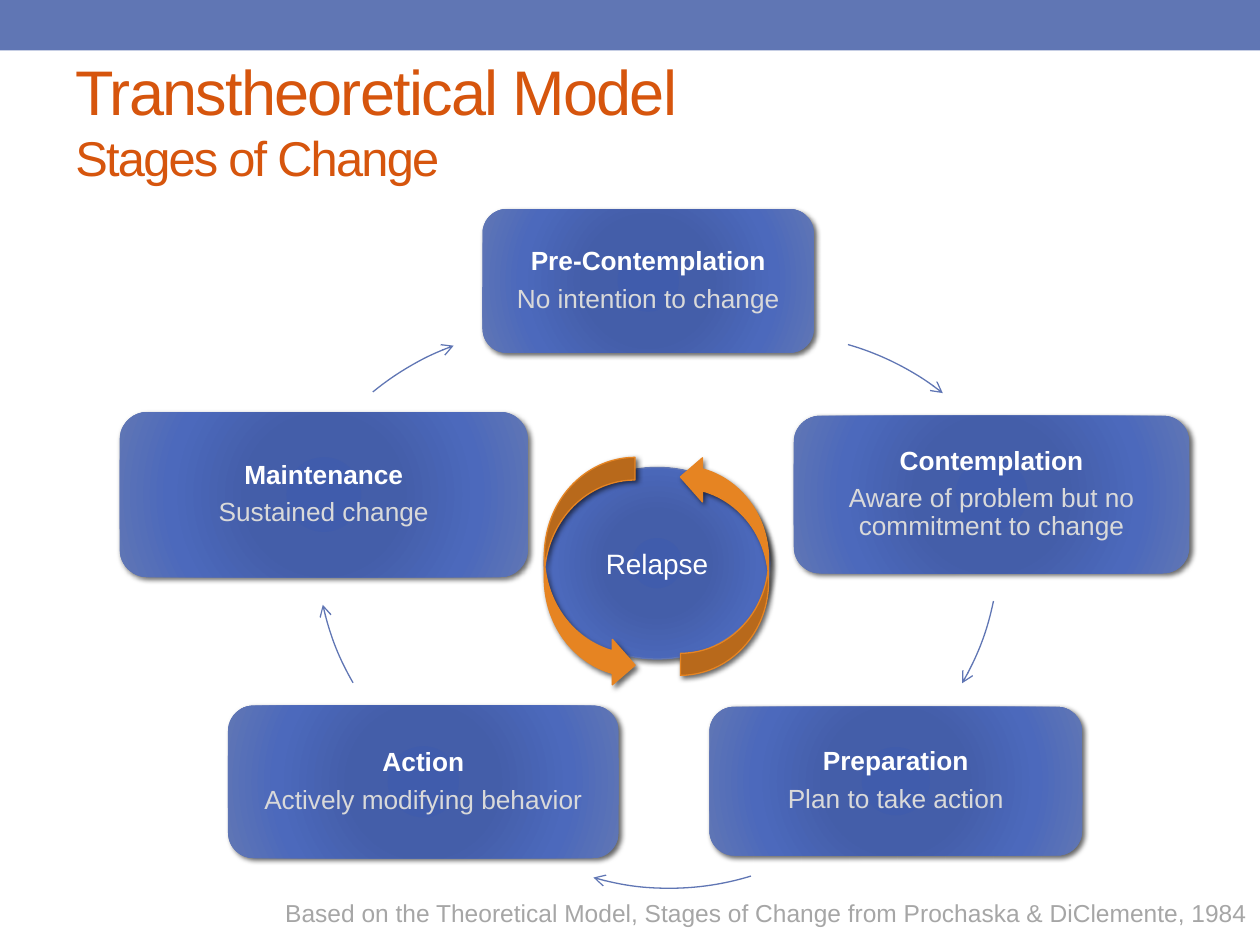
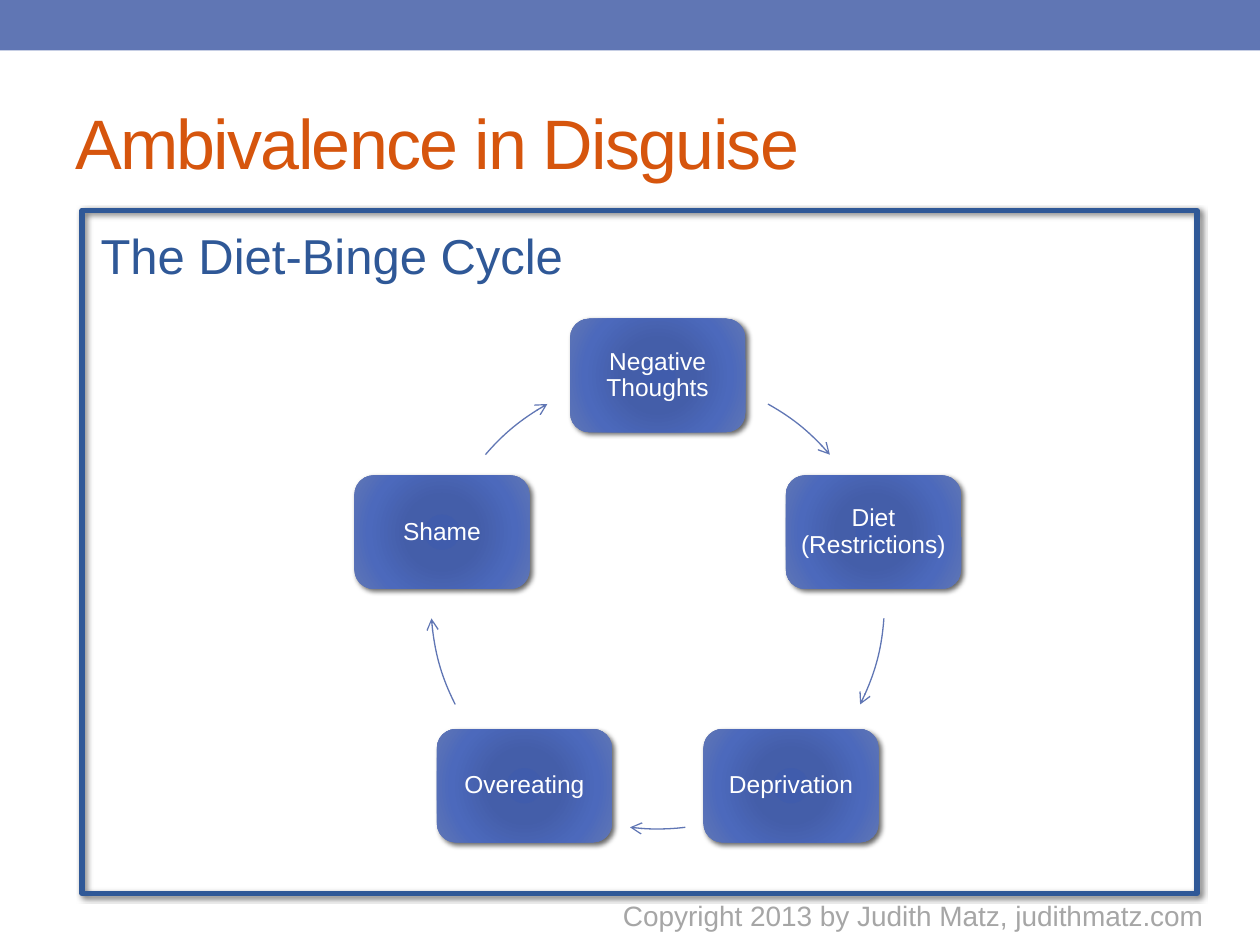
from math import cos, radians, sin

from pptx import Presentation
from pptx.dml.color import RGBColor
from pptx.enum.shapes import MSO_SHAPE
from pptx.enum.text import MSO_ANCHOR, PP_ALIGN
from pptx.oxml import parse_xml
from pptx.oxml.ns import nsdecls, qn
from pptx.util import Inches, Pt

FONT = "Arial"
BLUE = RGBColor(0x60, 0x76, 0xB4)
NAVY = RGBColor(0x2F, 0x58, 0x97)
RUST = RGBColor(0xD6, 0x55, 0x0D)
AMBER = RGBColor(0xE6, 0x84, 0x22)
GRAY = RGBColor(0xA6, 0xA6, 0xA6)
PALE = RGBColor(0xD9, 0xD9, 0xD9)
WHITE = RGBColor(0xFF, 0xFF, 0xFF)
GLOW = [(0, "405CAC"), (34, "445EA9"), (70, "4C69BC"), (100, "6076B4")]

STAGES = [
    ((3.83, 1.66, 2.63, 1.14), "Pre-Contemplation", "No intention to change"),
    ((6.3, 3.3, 3.14, 1.25), "Contemplation",
     "Aware of problem but no commitment to change"),
    ((5.63, 5.61, 2.96, 1.18), "Preparation", "Plan to take action"),
    ((1.81, 5.6, 3.1, 1.21), "Action", "Actively modifying behavior"),
    ((0.95, 3.27, 3.24, 1.31), "Maintenance", "Sustained change"),
]
STAGE_ARCS = [
    (3.93, 2.65, -74, -51.8),
    (3.54, 2.13, 11.7, 30),
    (3.12, 2.66, 72.9, 106),
    (2.51, 2.13, 150.1, 167.5),
    (2.16, 2.61, 230.5, 249.9),
]
CYCLE = ["Negative Thoughts", "Diet (Restrictions)", "Deprivation",
         "Overeating", "Shame"]
CYCLE_ARCS = [(-60.9, -40.6), (4.1, 26.8), (83, 97), (153.2, 175.9),
              (220.6, 240.9)]


def inches(box):
    return [Inches(n) for n in box]


def add_run(para, text, size, color, bold=False):
    run = para.add_run()
    run.text = text
    font = run.font
    font.name, font.size, font.bold = FONT, Pt(size), bold
    font.color.rgb = color
    return run


def add_label(slide, box, text, size, color, align=PP_ALIGN.LEFT):
    frame = slide.shapes.add_textbox(*inches(box)).text_frame
    frame.word_wrap = True
    para = frame.paragraphs[0]
    para.alignment = align
    add_run(para, text, size, color)


def add_title(slide, top, lines):
    box = inches((0.5, top, 9, 1.08))
    frame = slide.shapes.add_textbox(*box).text_frame
    frame.word_wrap = True
    frame.vertical_anchor = MSO_ANCHOR.MIDDLE
    para = frame.paragraphs[0]
    for i, (text, size) in enumerate(lines):
        if i:
            para.add_line_break()
        run = add_run(para, text, size, RUST)
        run.font._element.set("spc", "-100")


def add_form(slide, kind, box, fill=None, line=None, width=0.75):
    form = slide.shapes.add_shape(kind, *inches(box))
    form.shadow.inherit = False
    if fill is None:
        form.fill.background()
    else:
        form.fill.solid()
        form.fill.fore_color.rgb = fill
    if line is None:
        form.line.fill.background()
    else:
        form.line.color.rgb = line
        form.line.width = Pt(width)
    return form


def add_shade(form):
    form._element.spPr.find(qn("a:effectLst")).append(parse_xml(
        f'<a:outerShdw {nsdecls("a")} blurRad="{Pt(3)}" dist="{Pt(2)}" '
        'dir="2700000" algn="br" rotWithShape="0"><a:srgbClr val="000000">'
        '<a:alpha val="60000"/></a:srgbClr></a:outerShdw>'))


def add_glow(form):
    stops = "".join(f'<a:gs pos="{pos * 1000}"><a:srgbClr val="{tone}"/></a:gs>'
                    for pos, tone in GLOW)
    props = form._element.spPr
    props.replace(props.find(qn("a:noFill")), parse_xml(
        f'<a:gradFill {nsdecls("a")} rotWithShape="1"><a:gsLst>{stops}</a:gsLst>'
        '<a:path path="circle"><a:fillToRect l="100000" t="100000" '
        'r="100000" b="100000"/></a:path></a:gradFill>'))
    add_shade(form)


def add_card(slide, box, lines, size):
    card = add_form(slide, MSO_SHAPE.ROUNDED_RECTANGLE, box)
    add_glow(card)
    frame = card.text_frame
    frame.word_wrap = True
    frame.vertical_anchor = MSO_ANCHOR.MIDDLE
    frame.margin_left = frame.margin_right = Inches(0.06)
    frame.margin_top = frame.margin_bottom = Inches(0.06)
    for i, (text, color, bold) in enumerate(lines):
        para = frame.add_paragraph() if i else frame.paragraphs[0]
        para.alignment = PP_ALIGN.CENTER
        para.line_spacing = 0.9
        para.space_after = Pt(size * 0.35)
        add_run(para, text, size, color, bold)


def add_arc(slide, left, top, side, start, end):
    arc = add_form(slide, MSO_SHAPE.ARC, (left, top, side, side), line=BLUE)
    for i, turn in enumerate((start, end)):
        arc.adjustments[i] = turn % 360 * 0.6
    arc.line._get_or_add_ln().append(
        parse_xml(f'<a:tailEnd {nsdecls("a")} type="arrow"/>'))


def add_swirl(slide, box, turn=0):
    swirl = add_form(slide, MSO_SHAPE.CURVED_RIGHT_ARROW, box, AMBER, AMBER)
    swirl.rotation = turn
    add_shade(swirl)


def add_page(deck):
    slide = deck.slides.add_slide(deck.slide_layouts[6])
    add_form(slide, MSO_SHAPE.RECTANGLE, (0, 0, 10, 0.4), BLUE)
    return slide


def add_model(deck):
    slide = add_page(deck)
    hub = add_form(slide, MSO_SHAPE.OVAL, (4.32, 3.71, 1.79, 1.52), line=BLUE)
    add_glow(hub)
    hub.text_frame.vertical_anchor = MSO_ANCHOR.MIDDLE
    para = hub.text_frame.paragraphs[0]
    para.alignment = PP_ALIGN.CENTER
    add_run(para, "Relapse", 16, WHITE)
    add_title(slide, 0.41, [("Transtheoretical Model", 36),
                            ("Stages of Change", 27.9)])
    add_label(slide, (2.15, 7.08, 7.85, 0.34),
              "Based on the Theoretical Model, Stages of Change from "
              "Prochaska & DiClemente, 1984", 14, GRAY, PP_ALIGN.RIGHT)
    for (box, name, note), (x, y, start, end) in zip(STAGES, STAGE_ARCS):
        add_card(slide, box, [(name, WHITE, True), (note, PALE, False)], 15)
        add_arc(slide, x, y, 4.39, start, end)
    add_swirl(slide, (4.32, 3.63, 0.72, 1.83))
    add_swirl(slide, (5.4, 3.61, 0.7, 1.75), 180)


def add_cycle(deck):
    slide = add_page(deck)
    add_title(slide, 0.58, [("Ambivalence in Disguise", 40)])
    mid_x, mid_y, radius = 5.22, 4.78, 1.8
    wide, high = 1.39, 0.9
    for i, (name, (start, end)) in enumerate(zip(CYCLE, CYCLE_ARCS)):
        turn = radians(72 * i - 90)
        left = mid_x + radius * cos(turn) - wide / 2
        top = mid_y + radius * sin(turn) - high / 2
        add_card(slide, (left, top, wide, high), [(name, WHITE, False)], 14)
        add_arc(slide, mid_x - radius, mid_y - radius, 2 * radius, start, end)
    add_label(slide, (4.06, 7.08, 5.59, 0.37),
              "Copyright 2013 by Judith Matz, judithmatz.com", 16, GRAY,
              PP_ALIGN.RIGHT)
    add_label(slide, (0.7, 1.74, 4.28, 1.04), "The Diet-Binge Cycle", 28, NAVY)
    add_shade(add_form(slide, MSO_SHAPE.RECTANGLE, (0.65, 1.67, 8.85, 5.42),
                       line=NAVY, width=3))


def main():
    deck = Presentation()
    deck.slide_width, deck.slide_height = Inches(10), Inches(7.5)
    add_model(deck)
    add_cycle(deck)
    deck.save("out.pptx")


if __name__ == "__main__":
    main()
